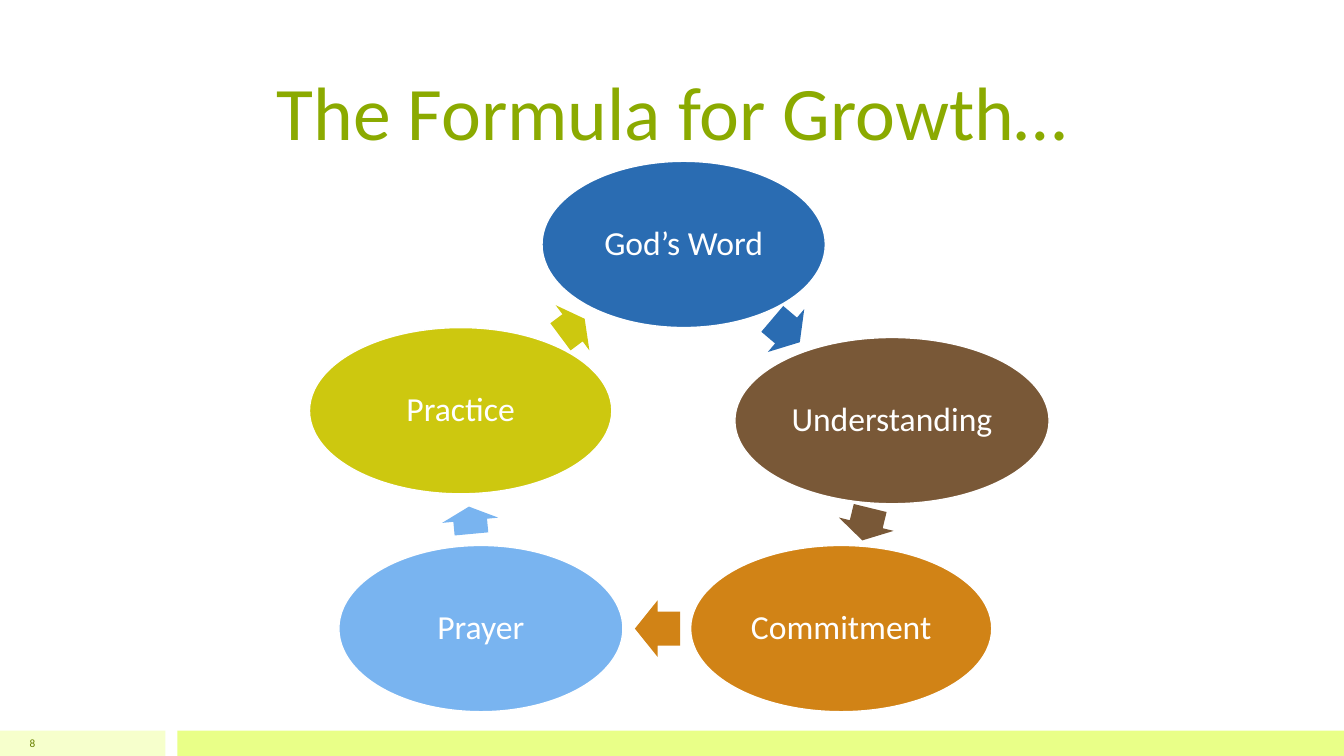
from pptx import Presentation
from pptx import util as u
from pptx.dml.color import RGBColor
from pptx.enum import shapes, text

COLORS = {
    "white": "FFFFFF", "title": "8BAA00", "number": "688000",
    "pale band": "F6FFCC", "lime band": "E9FF88",
    "blue": "2A6CB2", "brown": "795837", "orange": "D18316",
    "sky": "79B4F0", "olive": "CDC80F",
}
FONT = "Calibri"
SLIDE_WIDTH, SLIDE_HEIGHT = 33.87, 19.05
BAND_HEIGHT = 0.64
STEP_HEIGHT = 4.19
ARROW_HEIGHT = 1.42

# Step: label, colour, centre x, centre y, width (cm)
# Arrow to the next step: centre x, centre y, length (cm), rotation
CYCLE = [
    (("God’s Word", "blue", 17.23, 6.16, 7.14), (19.81, 8.33, 0.91, 40.3)),
    (("Understanding", "brown", 22.48, 10.6, 7.92), (21.83, 13.21, 0.84, 103.7)),
    (("Commitment", "orange", 21.2, 15.84, 7.59), (16.57, 15.84, 1.14, 180)),
    (("Prayer", "sky", 12.12, 15.84, 7.16), (11.85, 13.11, 0.69, 264.7)),
    (("Practice", "olive", 11.61, 10.35, 7.62), (14.43, 8.26, 0.76, 323.3)),
]


class SlideBuilder:
    """Holds the style and the current slide."""

    def __init__(self, slide):
        self.slide = slide

    def color(self, name):
        return RGBColor.from_string(COLORS[name])

    def label(self, shape, words, size, color, align, anchor):
        frame = shape.text_frame
        frame.text = words
        frame.word_wrap = True
        frame.auto_size = text.MSO_AUTO_SIZE.NONE
        frame.vertical_anchor = anchor
        paragraph = frame.paragraphs[0]
        paragraph.alignment = align
        paragraph.font.name = FONT
        paragraph.font.size = u.Pt(size)
        paragraph.font.color.rgb = self.color(color)
        return paragraph

    def title(self, words, left, top, width, height):
        title = self.slide.shapes.title
        title.left, title.top = u.Cm(left), u.Cm(top)
        title.width, title.height = u.Cm(width), u.Cm(height)
        self.label(title, words, 54, "title",
                   text.PP_ALIGN.CENTER, text.MSO_ANCHOR.BOTTOM)

    def filled(self, kind, color, left, top, width, height):
        shape = self.slide.shapes.add_shape(
            kind, u.Cm(left), u.Cm(top), u.Cm(width), u.Cm(height))
        shape.shadow.inherit = False
        shape.fill.solid()
        shape.fill.fore_color.rgb = self.color(color)
        shape.line.fill.background()
        return shape

    def band(self, color, left, width):
        self.filled(shapes.MSO_SHAPE.RECTANGLE, color, left,
                    SLIDE_HEIGHT - BAND_HEIGHT, width, BAND_HEIGHT)

    def step(self, name, color, x, y, width):
        ellipse = self.filled(shapes.MSO_SHAPE.OVAL, color, x - width / 2,
                              y - STEP_HEIGHT / 2, width, STEP_HEIGHT)
        ellipse.line.color.rgb = self.color("white")
        ellipse.line.width = u.Pt(1)
        frame = ellipse.text_frame
        frame.margin_left = frame.margin_right = u.Cm(0.08)
        frame.margin_top = frame.margin_bottom = u.Cm(0.08)
        paragraph = self.label(ellipse, name, 24, "white",
                               text.PP_ALIGN.CENTER, text.MSO_ANCHOR.MIDDLE)
        paragraph.line_spacing = 0.9

    def arrow(self, color, x, y, length, rotation):
        arrow = self.filled(shapes.MSO_SHAPE.RIGHT_ARROW, color, x - length / 2,
                            y - ARROW_HEIGHT / 2, length, ARROW_HEIGHT)
        arrow.adjustments[0] = 0.6
        arrow.adjustments[1] = 0.5
        arrow.rotation = rotation

    def page_number(self, number):
        box = self.slide.shapes.add_textbox(
            0, u.Cm(SLIDE_HEIGHT - BAND_HEIGHT), u.Cm(1.14), u.Cm(BAND_HEIGHT))
        self.label(box, number, 8, "number",
                   text.PP_ALIGN.RIGHT, text.MSO_ANCHOR.MIDDLE)


def main():
    deck = Presentation()
    deck.slide_width, deck.slide_height = u.Cm(SLIDE_WIDTH), u.Cm(SLIDE_HEIGHT)
    title_only = deck.slide_layouts[5]
    builder = SlideBuilder(deck.slides.add_slide(title_only))

    # Footer bands
    builder.band("pale band", 0, 4.17)
    builder.band("lime band", 4.47, SLIDE_WIDTH - 4.47)

    # Title
    builder.title("The Formula for Growth…", 3.91, 0.76, 26.04, 3.28)

    # Growth cycle
    for step, arrow in CYCLE:
        builder.step(*step)
        builder.arrow(step[1], *arrow)

    # Page number
    builder.page_number("8")

    deck.save("out.pptx")


if __name__ == "__main__":
    main()
